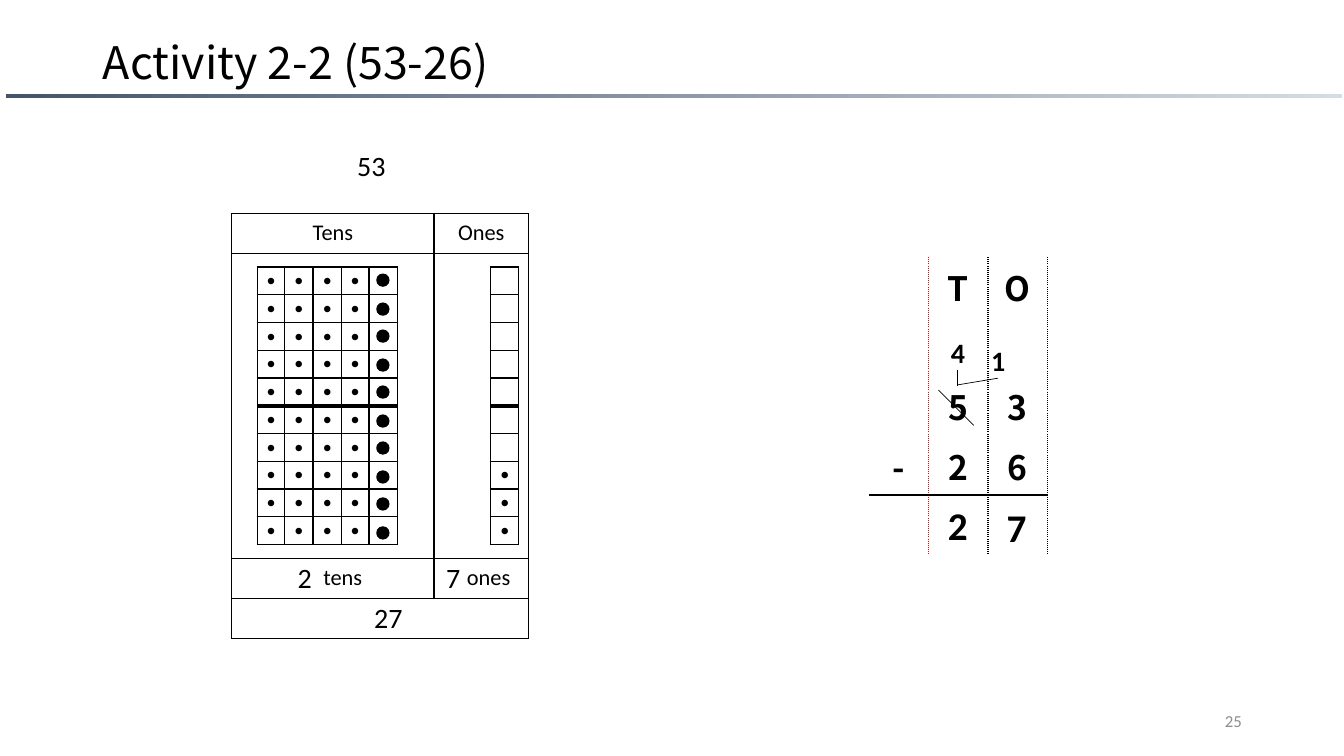
from dataclasses import dataclass

from lxml import etree
from pptx import Presentation
from pptx.dml.color import RGBColor
from pptx.enum import shapes, text
from pptx.oxml import ns
from pptx.util import Cm, Pt

BLACK = RGBColor(0x00, 0x00, 0x00)
RED = RGBColor(0xFF, 0x00, 0x00)
GREY = RGBColor(0x8C, 0x8C, 0x8C)
SLATE = RGBColor(0x44, 0x54, 0x6A)
MIST = RGBColor(0xD6, 0xDC, 0xE5)
BODY_FONT = "Calibri"
DISPLAY_FONT = "Noto Sans CJK JP"
DOT = "●"
UNIT = 0.7  # side of one counting square, in cm
STRIP_TOP = 6.73


@dataclass
class Border:
    width: float = 1
    color: RGBColor = BLACK
    dash: str = "solid"


@dataclass
class Label:
    text: str
    left: float
    top: float
    height: float = 1.12
    size: float = 20
    bold: bool = False


@dataclass
class Strip:
    left: float
    columns: int
    dots: int  # dotted squares per column, counted from the bottom


@dataclass
class Stroke:
    x1: float
    y1: float
    x2: float
    y2: float


LABELS = [
    Label("53", 8.56, 3.61),
    Label("2", 6.88, 14),
    Label("7", 10.62, 14),
    Label("27", 8.99, 15.01),
    Label("7", 24.82, 12.55, 1.45, 28, True),
    Label("2", 23.34, 12.52, 1.45, 28, True),
    Label("4", 23.34, 8.33, bold=True),
    Label("1", 24.36, 8.53, bold=True),
]
STRIPS = [Strip(6.48, 2, 10), Strip(12.37, 1, 3), Strip(9.32, 1, 0), Strip(7.9, 2, 10)]
STROKES = [
    Stroke(23.65, 9.83, 24.54, 10.72),
    Stroke(24.13, 9.32, 24.13, 9.73),
    Stroke(25.15, 9.53, 24.13, 9.7),
]


def write(frame, content: str, *, size: float, font: str = BODY_FONT,
          color: RGBColor = BLACK, bold: bool = False,
          align=text.PP_ALIGN.CENTER, spacing: float | None = None) -> None:
    paragraph = frame.paragraphs[0]
    paragraph.alignment = align
    if spacing:
        paragraph.line_spacing = spacing
    if not content:  # the end mark sets the height of an empty line
        end_mark = etree.SubElement(paragraph._p, ns.qn("a:endParaRPr"))
        end_mark.set("sz", str(int(size * 100)))
        return
    run = paragraph.add_run()
    run.text = content
    run.font.name, run.font.size = font, Pt(size)
    run.font.bold, run.font.color.rgb = bold, color


def set_borders(cell, left: Border | None, right: Border | None,
                top: Border | None, bottom: Border | None) -> None:
    properties = cell._tc.get_or_add_tcPr()
    for index, (side, border) in enumerate(zip("LRTB", (left, right, top, bottom))):
        line = etree.Element(ns.qn(f"a:ln{side}"))
        properties.insert(index, line)
        if border is None:
            etree.SubElement(line, ns.qn("a:noFill"))
            continue
        line.set("w", str(Pt(border.width)))
        fill = etree.SubElement(line, ns.qn("a:solidFill"))
        etree.SubElement(fill, ns.qn("a:srgbClr")).set("val", str(border.color))
        etree.SubElement(line, ns.qn("a:prstDash")).set("val", border.dash)


def add_grid(slide, left: float, top: float, widths: list[float], heights: list[float]):
    """Add a table with no style bands and no fill."""
    table = slide.shapes.add_table(
        len(heights), len(widths), Cm(left), Cm(top), Cm(sum(widths)), Cm(sum(heights))
    ).table
    table.first_row = table.horz_banding = False
    for column, width in zip(table.columns, widths):
        column.width = Cm(width)
    for row, height in zip(table.rows, heights):
        row.height = Cm(height)
    for cell in table.iter_cells():
        cell.fill.background()
    return table


def set_margins(cell, margin: float, left: float | None = None) -> None:
    cell.margin_top = cell.margin_bottom = cell.margin_right = Cm(margin)
    cell.margin_left = Cm(margin if left is None else left)


def add_subtraction(slide) -> None:
    rows = ["_TO", "___", "_53", "-26", "___"]
    table = add_grid(slide, 21.9, 6.48, [1.5] * 3, [1.5] * 5)
    dotted, rule = Border(1, BLACK, "sysDot"), Border(1.5)
    edges = [None, Border(1, RED, "sysDot"), dotted, dotted]
    for r, symbols in enumerate(rows):
        for c, symbol in enumerate(symbols):
            cell = table.cell(r, c)
            cell.vertical_anchor = text.MSO_ANCHOR.MIDDLE
            write(cell.text_frame, symbol.strip("_"), size=24, font=DISPLAY_FONT, bold=True)
            set_borders(cell, edges[c], edges[c + 1],
                        rule if r == 4 else None, rule if r == 3 else None)


def add_place_values(slide) -> None:
    rows = [("Tens", "Ones"), ("", ""), ("tens", "ones"), ("", "")]
    indents = {"tens": 0.63, "ones": 0.5}
    table = add_grid(slide, 5.84, 5.38, [5.1, 2.38], [1, 7.7, 1, 1])
    for r, words in enumerate(rows):
        for c, word in enumerate(words):
            cell = table.cell(r, c)
            set_margins(cell, 0.13, indents.get(word))
            write(cell.text_frame, word, size=16)
            set_borders(cell, *[Border()] * 4)
    table.cell(3, 0).merge(table.cell(3, 1))


def add_strip(slide, strip: Strip) -> None:
    table = add_grid(slide, strip.left, STRIP_TOP, [UNIT] * strip.columns, [UNIT] * 10)
    thin, thick = Border(), Border(3)
    for r in range(10):
        for c in range(strip.columns):
            cell = table.cell(r, c)
            set_margins(cell, 0)
            cell.vertical_anchor = text.MSO_ANCHOR.MIDDLE
            write(cell.text_frame, DOT if r >= 10 - strip.dots else "", size=10)
            set_borders(cell, thin, thin, thick if r == 5 else thin, thick if r == 4 else thin)


def add_counter(slide, index: int) -> None:
    top = 6.91 + 1.41 * (index // 2) + 0.73 * (index % 2)
    counter = slide.shapes.add_shape(
        shapes.MSO_SHAPE.OVAL, Cm(9.5), Cm(top), Cm(0.3), Cm(0.3))
    counter.shadow.inherit = False
    counter.fill.solid()
    counter.fill.fore_color.rgb = counter.line.color.rgb = BLACK
    counter.line.width = Pt(1)


def add_label(slide, label: Label) -> None:
    box = slide.shapes.add_textbox(Cm(label.left), Cm(label.top), Cm(1.6), Cm(label.height))
    box.text_frame.word_wrap = True
    write(box.text_frame, label.text, size=label.size, bold=label.bold)


def add_stroke(slide, stroke: Stroke) -> None:
    line = slide.shapes.add_connector(
        shapes.MSO_CONNECTOR.STRAIGHT,
        Cm(stroke.x1), Cm(stroke.y1), Cm(stroke.x2), Cm(stroke.y2))
    line.line.color.rgb, line.line.width = BLACK, Pt(0.5)
    etree.SubElement(line._element.spPr, ns.qn("a:effectLst"))


def add_heading(slide) -> None:
    bar = slide.shapes.add_shape(
        shapes.MSO_SHAPE.RECTANGLE, Cm(0.15), Cm(2.36), Cm(33.68), Cm(0.1))
    bar.shadow.inherit = False
    bar.line.fill.background()
    bar.fill.gradient()
    bar.fill.gradient_angle = 0
    for stop, color in zip(bar.fill.gradient_stops, (SLATE, MIST)):
        stop.color.rgb = color

    title = slide.shapes.title
    title.left, title.top, title.width, title.height = Cm(2.34), Cm(1.02), Cm(29.21), Cm(1.24)
    title.text_frame.vertical_anchor = text.MSO_ANCHOR.MIDDLE
    title.text_frame.auto_size = text.MSO_AUTO_SIZE.NONE
    write(title.text_frame, "Activity 2-2 (53-26)", size=32, font=DISPLAY_FONT,
          align=text.PP_ALIGN.LEFT, spacing=0.9)


def add_page_number(slide) -> None:
    box = slide.shapes.add_textbox(Cm(23.93), Cm(17.65), Cm(7.62), Cm(1.02))
    box.text_frame.word_wrap = True
    box.text_frame.vertical_anchor = text.MSO_ANCHOR.MIDDLE
    write(box.text_frame, "25", size=12, color=GREY, align=text.PP_ALIGN.RIGHT)


def main() -> None:
    presentation = Presentation()
    presentation.slide_width, presentation.slide_height = Cm(33.87), Cm(19.05)
    slide = presentation.slides.add_slide(presentation.slide_layouts[5])
    add_heading(slide)
    add_page_number(slide)
    add_subtraction(slide)
    add_place_values(slide)
    for strip in STRIPS:
        add_strip(slide, strip)
    for index in range(10):
        add_counter(slide, index)
    for label in LABELS:
        add_label(slide, label)
    for stroke in STROKES:
        add_stroke(slide, stroke)
    presentation.save("out.pptx")


if __name__ == "__main__":
    main()
